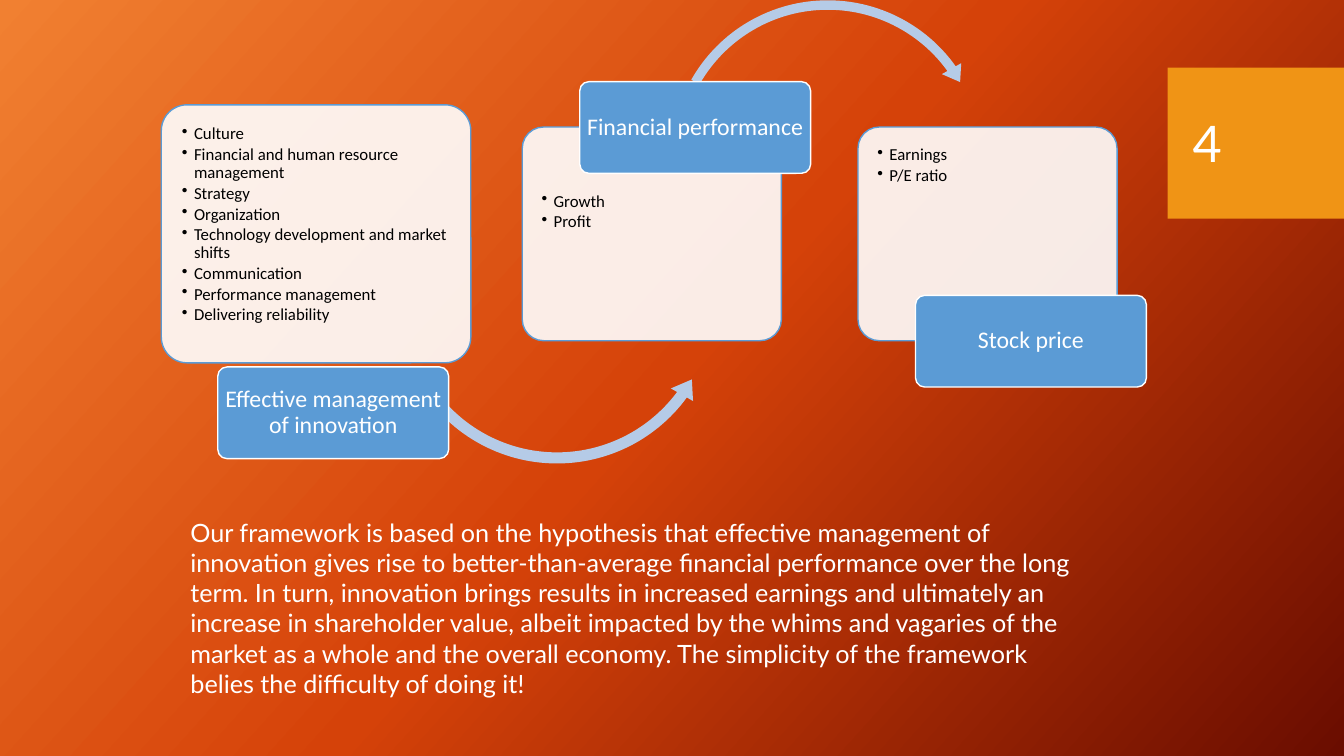
from copy import deepcopy
from dataclasses import dataclass

from lxml import etree
from pptx import Presentation
from pptx.dml.color import RGBColor
from pptx.enum.shapes import MSO_SHAPE
from pptx.enum.text import MSO_ANCHOR, PP_ALIGN
from pptx.oxml.ns import qn
from pptx.util import Inches, Pt

RECT = MSO_SHAPE.RECTANGLE
ROUNDED = MSO_SHAPE.ROUNDED_RECTANGLE
ARC_OVER = MSO_SHAPE.CIRCULAR_ARROW
ARC_UNDER = MSO_SHAPE.LEFT_CIRCULAR_ARROW
TOP, MIDDLE = MSO_ANCHOR.TOP, MSO_ANCHOR.MIDDLE
LEFT, CENTER = PP_ALIGN.LEFT, PP_ALIGN.CENTER


@dataclass(frozen=True)
class Theme:
    backdrop: tuple = ("F18031", "D54209", "6A0D00")
    orange: str = "F09415"
    blue: str = "5B9BD5"
    pale_blue: str = "B5CBE7"
    white: str = "FFFFFF"
    black: str = "000000"
    diagram_font: str = "Calibri"
    body_font: str = "Lato"
    bullet_size: int = 12
    label_size: int = 17
    body_size: int = 18
    number_size: int = 36


theme = Theme()


def add_block(kind, box, fill, line=None, adjustments=()):
    block = slide.shapes.add_shape(kind, *map(Inches, box))
    block.shadow.inherit = False
    block.fill.solid()
    block.fill.fore_color.rgb = RGBColor.from_string(fill)
    if line:
        block.line.color.rgb = RGBColor.from_string(line)
        block.line.width = Pt(1)
    else:
        block.line.fill.background()
    for index, value in enumerate(adjustments):
        block.adjustments[index] = value
    return block


def write(holder, lines, font, size, color, align=LEFT, anchor=TOP,
          margins=(0.1, 0.05, 0.1, 0.05), spacing=1.0, after=0, bullet=False):
    frame = holder.text_frame
    frame.word_wrap = True
    frame.vertical_anchor = anchor
    (frame.margin_left, frame.margin_top,
     frame.margin_right, frame.margin_bottom) = map(Inches, margins)
    for index, line in enumerate(lines):
        paragraph = frame.add_paragraph() if index else frame.paragraphs[0]
        paragraph.text = line
        paragraph.alignment = align
        paragraph.line_spacing = spacing
        paragraph.space_after = Pt(after)
        if bullet:
            properties = paragraph._p.get_or_add_pPr()
            properties.set("marL", str(Inches(0.12)))
            properties.set("indent", str(Inches(-0.12)))
            etree.SubElement(properties, qn("a:buChar"), char="•")
        paragraph.font.name = font
        paragraph.font.size = Pt(size)
        paragraph.font.color.rgb = RGBColor.from_string(color)


prs = Presentation()
prs.slide_width, prs.slide_height = Inches(13.33), Inches(7.5)
slide = prs.slides.add_slide(prs.slide_layouts[6])

backdrop = slide.background.fill
backdrop.gradient()
backdrop.gradient_angle = 318
stop_list = slide.element.find(".//" + qn("a:gsLst"))
stop_list.insert(1, deepcopy(stop_list[0]))
for stop, position, color in zip(backdrop.gradient_stops, (0, 0.5, 1), theme.backdrop):
    stop.position = position
    stop.color.rgb = RGBColor.from_string(color)

add_block(RECT, (11.58, 0.67, 1.75, 1.5), theme.orange)

stages = [
    ("Effective management of innovation", (2.16, 3.64), (1.6, 1.04, 3.07, 2.56), 0.13,
     ["Culture", "Financial and human resource management", "Strategy",
      "Organization", "Technology development and market shifts",
      "Communication", "Performance management", "Delivering reliability"],
     (ARC_UNDER, (3.86, 1.34, 3.33, 3.33), (0.033, 4.04, 21.796, 90.245, 0.038))),
    ("Financial performance", (5.75, 0.81), (5.18, 1.26, 2.57, 2.12), 0.59,
     ["Growth", "Profit"],
     (ARC_OVER, (6.59, -0.06, 3.24, 3.24), (0.029, 3.597, 194.648, 125.755, 0.034))),
    ("Stock price", (9.08, 2.93), (8.51, 1.26, 2.57, 2.12), 0.13,
     ["Earnings", "P/E ratio"], None),
]

for title, title_corner, card_box, card_top_margin, factors, arrow in stages:
    card = add_block(ROUNDED, card_box, theme.white, theme.blue, (0.1,))
    card_color = card._element.spPr.find(qn("a:solidFill"))[0]
    etree.SubElement(card_color, qn("a:alpha"), val="90000")
    write(card, factors, theme.diagram_font, theme.bullet_size, theme.black,
          margins=(0.13, card_top_margin, 0.13, 0.13), spacing=0.9, after=1.8, bullet=True)
    if arrow:
        arc, arc_box, arc_shape = arrow
        add_block(arc, arc_box, theme.pale_blue, adjustments=arc_shape)
    label = add_block(ROUNDED, (*title_corner, 2.29, 0.91), theme.blue, theme.white, (0.1,))
    write(label, [title], theme.diagram_font, theme.label_size, theme.white,
          CENTER, MIDDLE, (0.04, 0.02, 0.04, 0.02), spacing=0.9)

summary = slide.shapes.add_textbox(*map(Inches, (1.79, 5.08, 9.18, 1.92)))
write(summary, [
    "Our framework is based on the hypothesis that effective management of innovation "
    "gives rise to better-than-average financial performance over the long term. "
    "In turn, innovation brings results in increased earnings and ultimately an increase "
    "in shareholder value, albeit impacted by the whims and vagaries of the market as a "
    "whole and the overall economy. The simplicity of the framework belies the difficulty "
    "of doing it!"
], theme.body_font, theme.body_size, theme.white)

page_number = slide.shapes.add_textbox(*map(Inches, (11.73, 0.82, 1.26, 1.19)))
write(page_number, ["4"], theme.body_font, theme.number_size, theme.white, anchor=MIDDLE)

prs.save("out.pptx")
